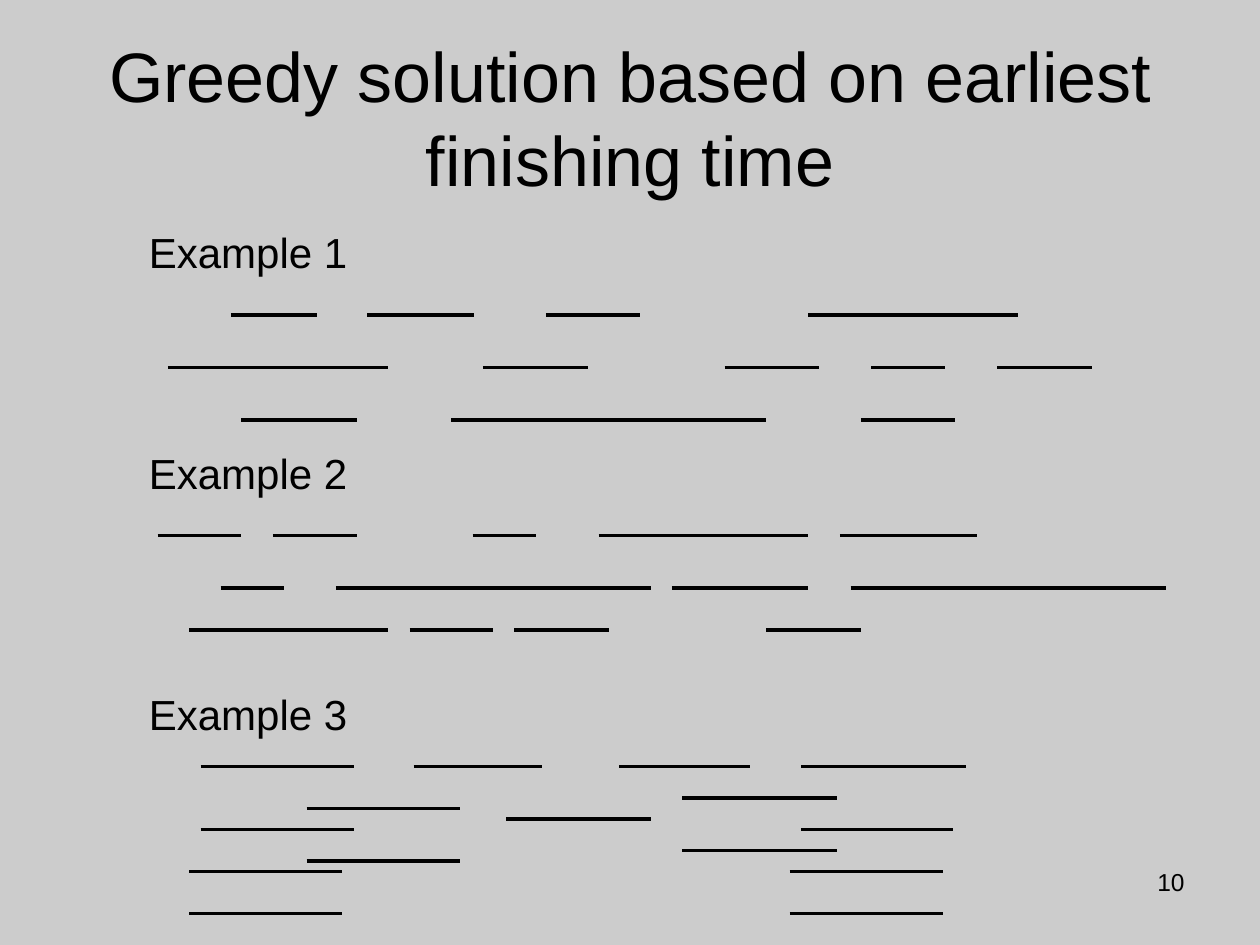
"""Build a slide of interval rows for greedy scheduling by finishing time."""
from typing import NamedTuple

from lxml import etree
from pptx import Presentation
from pptx.dml.color import RGBColor
from pptx.enum.shapes import MSO_CONNECTOR
from pptx.enum.text import MSO_ANCHOR, MSO_AUTO_SIZE, PP_ALIGN
from pptx.oxml.ns import qn
from pptx.util import Emu, Pt

LINE = MSO_CONNECTOR.STRAIGHT
TOP, MIDDLE = MSO_ANCHOR.TOP, MSO_ANCHOR.MIDDLE
NO_FIT = MSO_AUTO_SIZE.NONE
LEFT, CENTER, RIGHT = PP_ALIGN.LEFT, PP_ALIGN.CENTER, PP_ALIGN.RIGHT
SCALE = 7620
BLACK, GRAY = "000000", "CCCCCC"


class Row(NamedTuple):
    y: int
    spans: tuple[tuple[int, int], ...]


class Example(NamedTuple):
    name: str
    top: int
    width: int
    rows: tuple[Row, ...]


EXAMPLES = (
    Example("Example 1", 210, 804, (
        Row(300, ((220, 302), (350, 451), (520, 610), (770, 970))),
        Row(350, ((160, 370), (460, 560), (690, 780), (830, 900), (950, 1040))),
        Row(400, ((230, 340), (430, 730), (820, 910))),
    )),
    Example("Example 2", 420, 670, (
        Row(510, ((150, 230), (260, 340), (450, 510), (570, 770), (800, 930))),
        Row(560, ((210, 270), (320, 620), (640, 770), (810, 1110))),
        Row(600, ((180, 370), (390, 470), (490, 580), (730, 820))),
    )),
    Example("Example 3", 650, 840, (
        Row(730, ((191, 337), (394, 516), (590, 714), (763, 920))),
        Row(760, ((650, 797),)),
        Row(770, ((292, 438),)),
        Row(780, ((482, 620),)),
        Row(790, ((191, 337), (763, 908))),
        Row(810, ((650, 797),)),
        Row(820, ((292, 438),)),
        Row(830, ((180, 326), (752, 898))),
        Row(870, ((180, 326), (752, 898))),
    )),
)


def px(n: int) -> Emu:
    """Turn px into EMU."""
    return Emu(n * SCALE)


def color(code: str) -> RGBColor:
    """Turn a hex string into a colour."""
    return RGBColor.from_string(code)


def write(slide, text: str, box: tuple[int, int, int, int], *, size: int,
          align=LEFT, anchor=TOP, shape=None) -> None:
    """Write text into a given shape or a new text box."""
    if shape is None:
        shape = slide.shapes.add_textbox(0, 0, 0, 0)
    shape.left, shape.top, shape.width, shape.height = map(px, box)
    frame = shape.text_frame
    frame.text = text
    frame.word_wrap = True
    frame.auto_size = NO_FIT
    frame.vertical_anchor = anchor
    para = frame.paragraphs[0]
    para.alignment = align
    font = para.runs[0].font
    font.name, font.size = "Arial", Pt(size)
    font.color.rgb = color(BLACK)


def draw_row(slide, row: Row) -> None:
    """Draw each interval of one row."""
    for start, end in row.spans:
        line = slide.shapes.add_connector(
            LINE, px(start), px(row.y), px(end), px(row.y))
        line.line.color.rgb = color(BLACK)
        line.line.width = Pt(2.25)
        etree.SubElement(line._element.spPr, qn("a:effectLst"))


def draw_example(slide, example: Example) -> None:
    """Draw the label and the rows of one example."""
    write(slide, example.name, (130, example.top, example.width, 60), size=24)
    for row in example.rows:
        draw_row(slide, row)


def main() -> None:
    """Build and save the slide."""
    deck = Presentation()
    deck.slide_width, deck.slide_height = px(1200), px(900)
    slide = deck.slides.add_slide(deck.slide_layouts[5])
    fill = slide.background.fill
    fill.solid()
    fill.fore_color.rgb = color(GRAY)
    write(slide, "Greedy solution based on earliest finishing time",
          (60, 36, 1080, 150), size=40, align=CENTER, anchor=MIDDLE,
          shape=slide.shapes.title)
    for example in EXAMPLES:
        draw_example(slide, example)
    write(slide, "10", (860, 820, 280, 62), size=14, align=RIGHT)
    deck.save("out.pptx")


if __name__ == "__main__":
    main()
